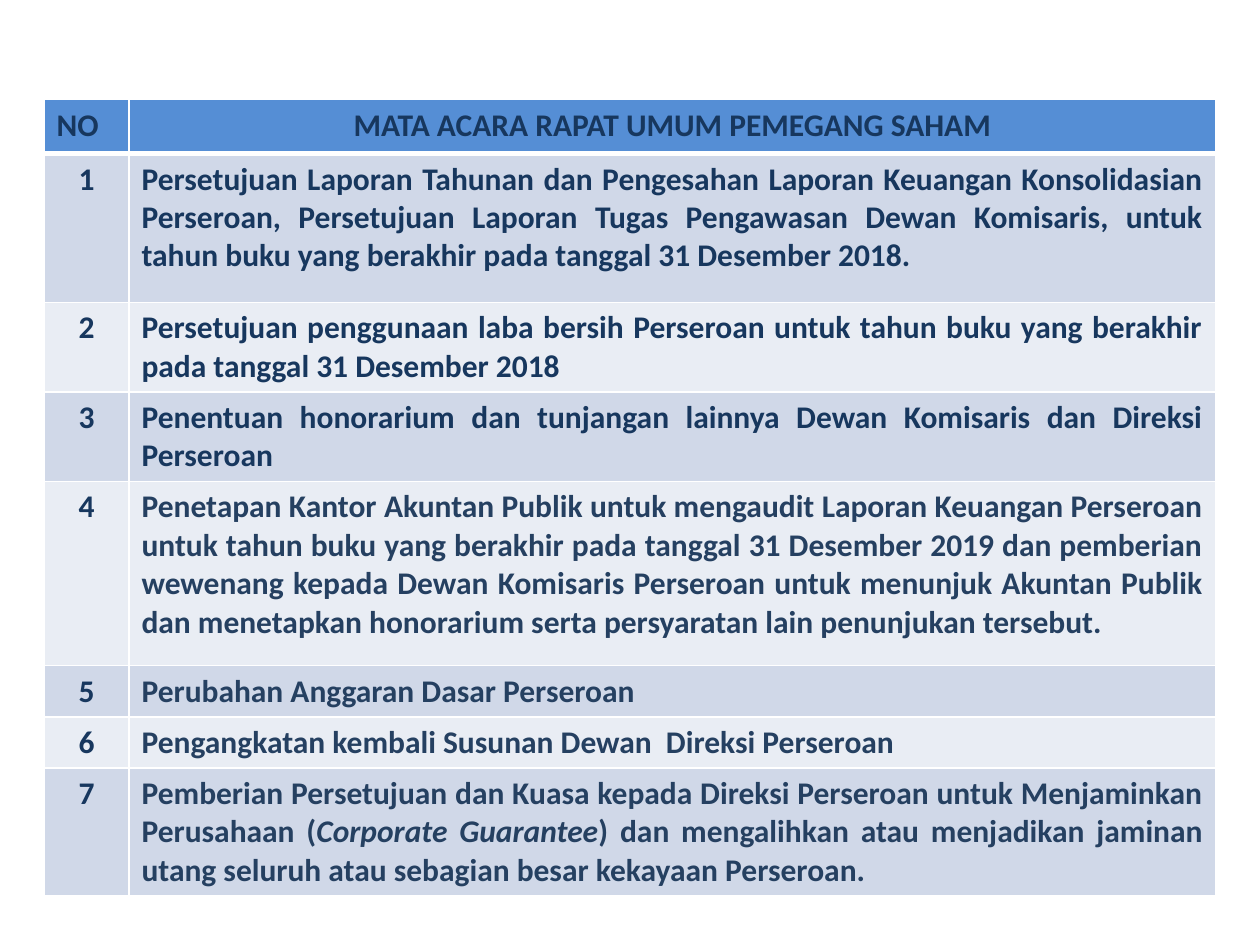
from lxml.etree import SubElement
from pptx import Presentation
from pptx.dml.color import RGBColor
from pptx.enum.text import PP_ALIGN as Align
from pptx.oxml.ns import qn
from pptx.util import Cm, Pt

COLORS = {
    "header": "558ED5",
    "odd": "D0D8E8",
    "even": "E9EDF4",
    "border": "FFFFFF",
    "navy": "17375E",
    "slate": "254061",
}
HEADINGS = ("NO", "MATA ACARA RAPAT UMUM PEMEGANG SAHAM")
HEADER_HEIGHT = 1.09
ITALIC_TERM = "Corporate Guarantee"

# Agenda text, text colour, row height in cm
AGENDA = [
    ("Persetujuan Laporan Tahunan dan Pengesahan Laporan Keuangan Konsolidasian "
     "Perseroan, Persetujuan Laporan Tugas Pengawasan Dewan Komisaris, untuk "
     "tahun buku yang berakhir pada tanggal 31 Desember 2018.", "navy", 3),
    ("Persetujuan penggunaan laba bersih Perseroan untuk tahun buku yang berakhir "
     "pada tanggal 31 Desember 2018", "navy", 1.68),
    ("Penentuan honorarium dan tunjangan lainnya Dewan Komisaris dan Direksi "
     "Perseroan", "navy", 1.75),
    ("Penetapan Kantor Akuntan Publik untuk mengaudit Laporan Keuangan Perseroan "
     "untuk tahun buku yang berakhir pada tanggal 31 Desember 2019 dan pemberian "
     "wewenang kepada Dewan Komisaris Perseroan untuk menunjuk Akuntan Publik "
     "dan menetapkan honorarium serta persyaratan lain penunjukan tersebut.",
     "slate", 3.71),
    ("Perubahan Anggaran Dasar Perseroan", "slate", 0.79),
    ("Pengangkatan kembali Susunan Dewan  Direksi Perseroan", "slate", 0.97),
    ("Pemberian Persetujuan dan Kuasa kepada Direksi Perseroan untuk Menjaminkan "
     "Perusahaan (Corporate Guarantee) dan mengalihkan atau menjadikan jaminan "
     "utang seluruh atau sebagian besar kekayaan Perseroan.", "slate", 2.39),
]
LEFT, TOP = 0.89, 2.01
COLUMN_WIDTHS = (1.71, 21.91)


def add_borders(cell, bottom_width):
    properties = cell._tc.get_or_add_tcPr()
    for side, width in (("L", 1), ("R", 1), ("T", 1), ("B", bottom_width)):
        line = SubElement(properties, qn(f"a:ln{side}"), w=str(Pt(width)))
        fill = SubElement(line, qn("a:solidFill"))
        SubElement(fill, qn("a:srgbClr"), val=COLORS["border"])


def fill_cell(cell, text, align, background, color="navy", bottom_width=1):
    """Write and style a cell, setting the foreign term in italics."""
    add_borders(cell, bottom_width)
    cell.fill.solid()
    cell.fill.fore_color.rgb = RGBColor.from_string(COLORS[background])
    paragraph = cell.text_frame.paragraphs[0]
    paragraph.alignment = align
    before, term, after = text.partition(ITALIC_TERM)
    for part in filter(None, (before, term, after)):
        run = paragraph.add_run()
        run.text = part
        if part == ITALIC_TERM:
            run.font.italic = True
        font = run.font
        font.name, font.size, font.bold = "Calibri", Pt(18), True
        font.color.rgb = RGBColor.from_string(COLORS[color])


def main():
    deck = Presentation()
    deck.slide_width, deck.slide_height = Cm(25.4), Cm(19.05)
    slide = deck.slides.add_slide(deck.slide_layouts[6])

    heights = [HEADER_HEIGHT] + [height for _, _, height in AGENDA]
    agenda_table = slide.shapes.add_table(
        len(heights), len(COLUMN_WIDTHS), Cm(LEFT), Cm(TOP),
        Cm(sum(COLUMN_WIDTHS)), Cm(sum(heights))).table
    for column, width in zip(agenda_table.columns, COLUMN_WIDTHS):
        column.width = Cm(width)
    for row, height in zip(agenda_table.rows, heights):
        row.height = Cm(height)

    for column, (heading, align) in enumerate(zip(HEADINGS, (Align.LEFT, Align.CENTER))):
        fill_cell(agenda_table.cell(0, column), heading, align, "header", bottom_width=3)
    for number, (item, color, _) in enumerate(AGENDA, 1):
        band = "odd" if number % 2 else "even"
        fill_cell(agenda_table.cell(number, 0), str(number), Align.CENTER, band)
        fill_cell(agenda_table.cell(number, 1), item, Align.JUSTIFY, band, color)

    deck.save("out.pptx")


if __name__ == "__main__":
    main()
